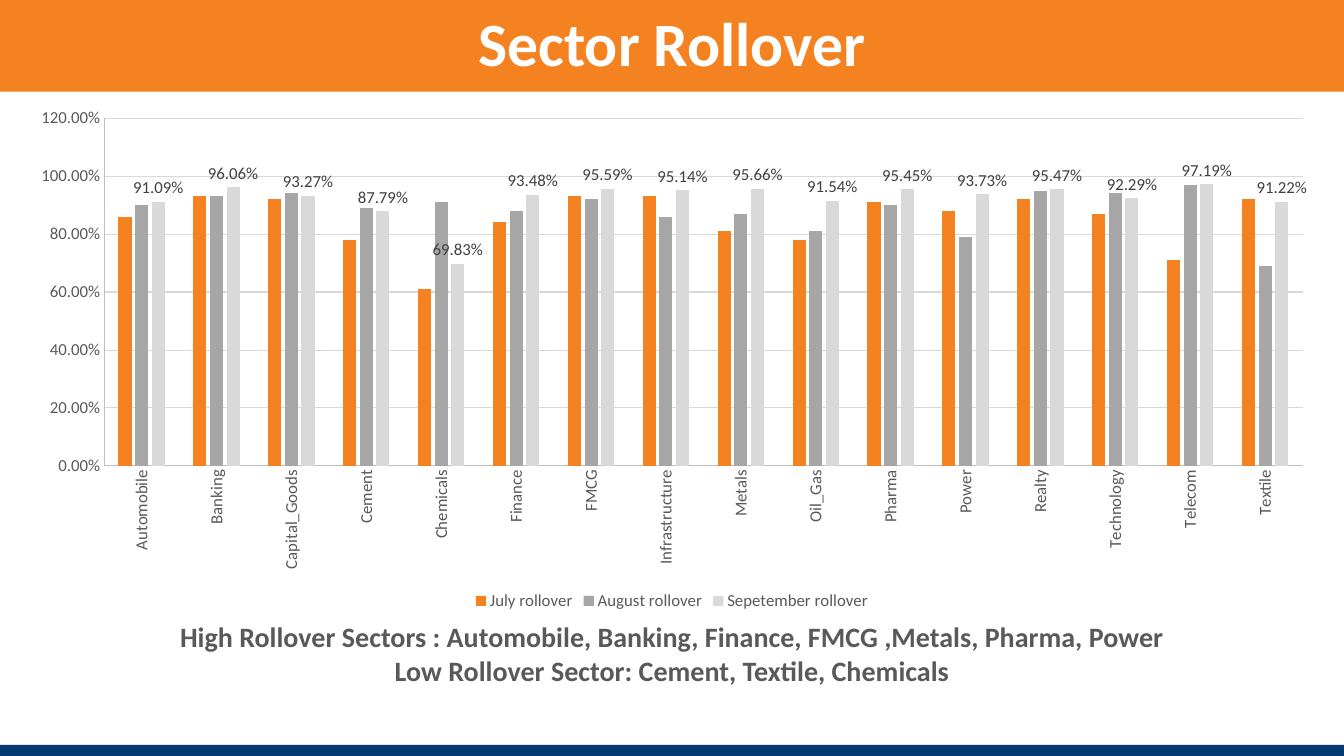
from dataclasses import dataclass

from lxml import etree
from pptx import Presentation
from pptx.chart.data import CategoryChartData
from pptx.dml.color import RGBColor
from pptx.enum.chart import XL_CHART_TYPE, XL_LABEL_POSITION as LabelPos
from pptx.enum.chart import XL_LEGEND_POSITION as LegendPos, XL_TICK_MARK as TickMark
from pptx.enum.shapes import MSO_SHAPE
from pptx.enum.text import MSO_ANCHOR, MSO_AUTO_SIZE, PP_ALIGN
from pptx.oxml.ns import qn
from pptx.util import Inches, Pt

FONT = "Calibri"
ORANGE, NAVY, WHITE = "F58220", "043B72", "FFFFFF"
TEXT_GREY, LABEL_GREY, AXIS_GREY, GRID_GREY = "595959", "404040", "BFBFBF", "D9D9D9"
PERCENT = "0.00%"
WIDTH, HEIGHT = 13.33, 7.5


@dataclass
class Band:
    top: float
    height: float
    color: str


@dataclass
class Rollover:
    name: str
    color: str
    values: list[float]
    labelled: bool = False


BANDS = [Band(7.39, 0.11, NAVY), Band(0, 0.91, ORANGE)]
SECTORS = ["Automobile", "Banking", "Capital_Goods", "Cement", "Chemicals", "Finance",
           "FMCG", "Infrastructure", "Metals", "Oil_Gas", "Pharma", "Power", "Realty",
           "Technology", "Telecom", "Textile"]
ROLLOVERS = [
    Rollover("July rollover", ORANGE,
             [0.86, 0.93, 0.92, 0.78, 0.61, 0.84, 0.93, 0.93,
              0.81, 0.78, 0.91, 0.88, 0.92, 0.87, 0.71, 0.92]),
    Rollover("August rollover", "A6A6A6",
             [0.9, 0.93, 0.94, 0.89, 0.91, 0.88, 0.92, 0.86,
              0.87, 0.81, 0.9, 0.79, 0.95, 0.94, 0.97, 0.69]),
    Rollover("Sepetember rollover", "D9D9D9",
             [0.9109, 0.9606, 0.9327, 0.8779, 0.6983, 0.9348, 0.9559, 0.9514,
              0.9566, 0.9154, 0.9545, 0.9373, 0.9547, 0.9229, 0.9719, 0.9122], True),
]
SUMMARY = ["High Rollover Sectors : Automobile, Banking, Finance, FMCG ,Metals, Pharma, Power",
           "Low Rollover Sector: Cement, Textile, Chemicals"]


def rgb(color: str) -> RGBColor:
    return RGBColor.from_string(color)


def set_font(font, size: float, color: str, bold: bool = False) -> None:
    font.name, font.size, font.bold = FONT, Pt(size), bold
    font.color.rgb = rgb(color)


def set_line(line, color: str) -> None:
    line.width = Pt(0.75)
    line.color.rgb = rgb(color)


def add_band(slide, band: Band) -> None:
    sp = slide.shapes.add_shape(MSO_SHAPE.RECTANGLE, 0, Inches(band.top),
                                Inches(WIDTH), Inches(band.height))
    sp.shadow.inherit = False
    sp.fill.solid()
    sp.fill.fore_color.rgb = rgb(band.color)
    sp.line.fill.background()
    slide.shapes.title._element.addprevious(sp._element)


def fill_placeholder(sp, top: float, height: float, lines: list[str], size: float,
                     color: str, anchor: MSO_ANCHOR) -> None:
    sp.left, sp.top, sp.width, sp.height = 0, Inches(top), Inches(WIDTH), Inches(height)
    tf = sp.text_frame
    tf.text = "\n".join(lines)
    tf.word_wrap = True
    tf.auto_size = MSO_AUTO_SIZE.NONE
    tf.vertical_anchor = anchor
    for p in tf.paragraphs:
        pPr = p._p.get_or_add_pPr()
        pPr.set("marL", "0")
        pPr.set("indent", "0")
        etree.SubElement(pPr, qn("a:buNone"))
        p.alignment = PP_ALIGN.CENTER
        p.space_before = Pt(0)
        for r in p.runs:
            set_font(r.font, size, color, True)


def format_axis(axis) -> None:
    axis.major_tick_mark = axis.minor_tick_mark = TickMark.NONE
    set_font(axis.tick_labels.font, 12, TEXT_GREY)
    set_line(axis.format.line, AXIS_GREY)


def add_rollover_chart(slide) -> None:
    data = CategoryChartData(number_format=PERCENT)
    data.categories = SECTORS
    for rollover in ROLLOVERS:
        data.add_series(rollover.name, rollover.values)
    chart = slide.shapes.add_chart(XL_CHART_TYPE.COLUMN_CLUSTERED, Inches(0.15), Inches(0.97),
                                   Inches(13.03), Inches(5.13), data).chart
    set_font(chart.font, 12, "000000")
    chart.has_title = False
    chart.has_legend = True
    chart.legend.position = LegendPos.BOTTOM
    chart.legend.include_in_layout = False
    set_font(chart.legend.font, 12, TEXT_GREY)

    for axis in (chart.category_axis, chart.value_axis):
        format_axis(axis)
    chart.category_axis._element.find(qn("c:txPr")).find(qn("a:bodyPr")).set("rot", "-5400000")
    value_axis = chart.value_axis
    value_axis.minimum_scale, value_axis.maximum_scale, value_axis.major_unit = 0, 1.2, 0.2
    value_axis.tick_labels.number_format = PERCENT
    value_axis.tick_labels.number_format_is_linked = False
    set_line(value_axis.major_gridlines.format.line, GRID_GREY)

    plot = chart.plots[0]
    plot.gap_width, plot.overlap, plot.vary_by_categories = 219, -27, False
    for series, rollover in zip(plot.series, ROLLOVERS):
        series.format.fill.solid()
        series.format.fill.fore_color.rgb = rgb(rollover.color)
        series.invert_if_negative = False
        if rollover.labelled:
            labels = series.data_labels
            labels.show_value = True
            labels.position = LabelPos.OUTSIDE_END
            labels.number_format = PERCENT
            labels.number_format_is_linked = False
            set_font(labels.font, 12, LABEL_GREY)


def main() -> None:
    prs = Presentation()
    prs.slide_width, prs.slide_height = Inches(WIDTH), Inches(HEIGHT)
    slide = prs.slides.add_slide(prs.slide_layouts[1])
    for band in BANDS:
        add_band(slide, band)
    fill_placeholder(slide.shapes.title, 0, 0.84, ["Sector Rollover"], 44, WHITE,
                     MSO_ANCHOR.MIDDLE)
    fill_placeholder(slide.placeholders[1], 6.1, 0.77, SUMMARY, 20, TEXT_GREY, MSO_ANCHOR.TOP)
    add_rollover_chart(slide)
    prs.save("out.pptx")


if __name__ == "__main__":
    main()
